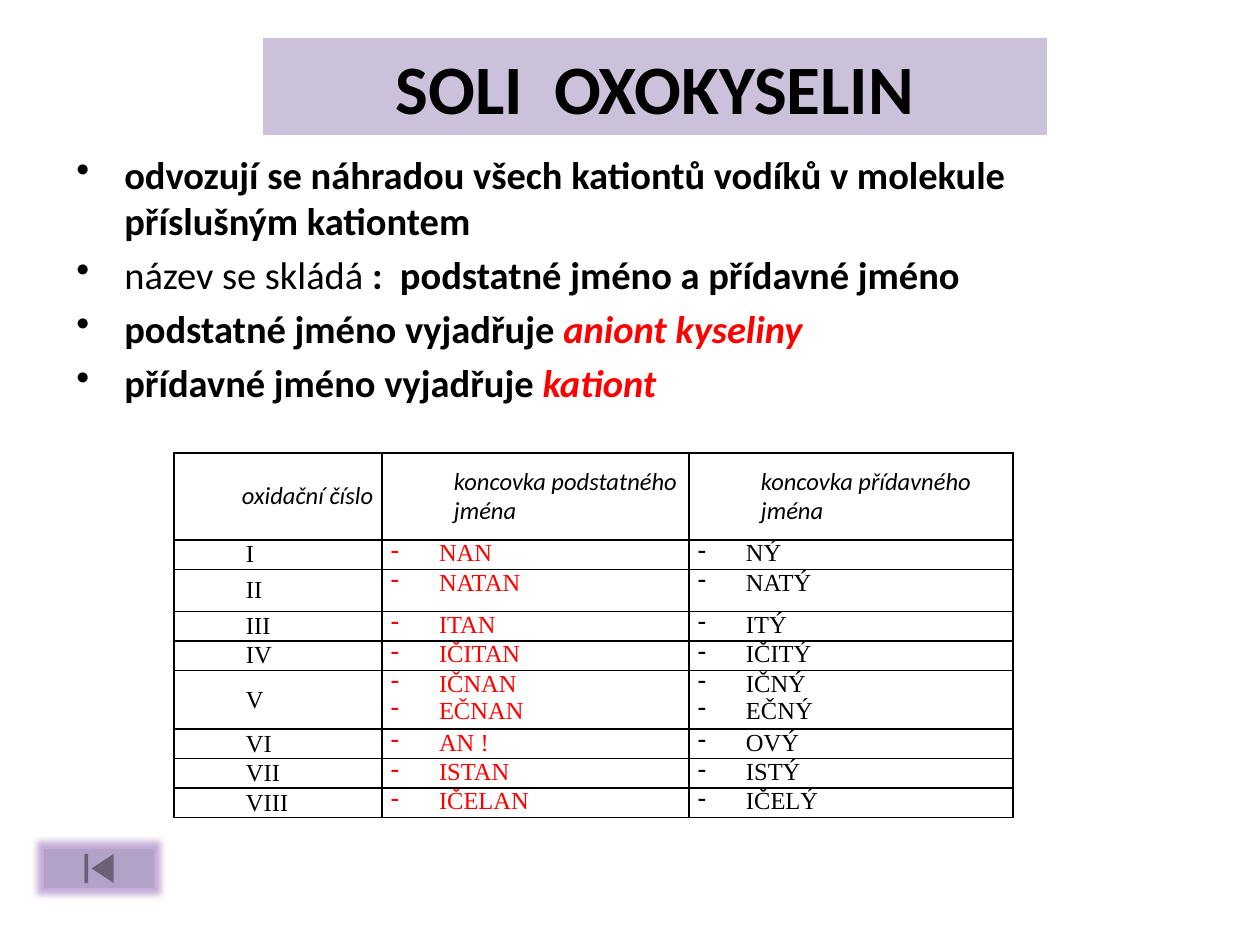
import pptx
import pptx.util
import pptx.dml.color
import pptx.enum.shapes
import pptx.enum.text
import pptx.oxml
import pptx.oxml.ns

PX = 914400 / 126
NS = pptx.oxml.ns.nsdecls("a")
MIDDLE = pptx.enum.text.MSO_ANCHOR.MIDDLE
BLACK, RED = "000000", "FF0000"


def px(n):
    return pptx.util.Emu(round(n * PX))


def style(p, size, color=BLACK, font="Calibri", bold=False, italic=False,
          margin=0, bullet=None):
    """Format every run of a paragraph, its left margin and its bullet."""
    for r in p.runs:
        r.font.size = pptx.util.Pt(size)
        r.font.name = font
        r.font.bold = bold
        r.font.italic = italic
        r.font.color.rgb = pptx.dml.color.RGBColor.from_string(color)
    pPr = p._p.get_or_add_pPr()
    pPr.set("marL", str(px(margin)))
    pPr.set("indent", str(-px(margin) if bullet else 0))
    if bullet:
        pPr.append(pptx.oxml.parse_xml(f'<a:buChar {NS} char="{bullet}"/>'))


prs = pptx.Presentation()
prs.slide_width, prs.slide_height = px(1260), px(945)
s = prs.slides.add_slide(prs.slide_layouts[5])

# Title
sp = s.shapes.title
sp.left, sp.top, sp.width, sp.height = px(263), px(38), px(784), px(97)
sp.fill.solid()
sp.fill.fore_color.rgb = pptx.dml.color.RGBColor.from_string("CCC1DA")
tf = sp.text_frame
tf.text = "SOLI  OXOKYSELIN"
tf.auto_size = pptx.enum.text.MSO_AUTO_SIZE.NONE
tf.vertical_anchor = MIDDLE
tf.paragraphs[0].alignment = pptx.enum.text.PP_ALIGN.CENTER
style(tf.paragraphs[0], 39.6, bold=True)

# Bullet list: runs of (text, colour, bold, italic)
points = [
    [("odvozují se náhradou všech kationtů vodíků v\u00a0molekule příslušným kationtem",
      BLACK, True, False)],
    [("název se skládá", BLACK, False, False),
     (" :  podstatné jméno a přídavné jméno", BLACK, True, False)],
    [("podstatné jméno vyjadřuje ", BLACK, True, False),
     ("aniont kyseliny", RED, True, True)],
    [("přídavné jméno vyjadřuje ", BLACK, True, False),
     ("kationt", RED, True, True)],
]
tf = s.shapes.add_textbox(px(64), px(145), px(1134), px(297)).text_frame
tf.word_wrap = True
for i, runs in enumerate(points):
    p = tf.paragraphs[0] if i == 0 else tf.add_paragraph()
    p.space_before = pptx.util.Pt(4.4)
    for text, *_ in runs:
        p.add_run().text = text
    style(p, 22, margin=48, bullet="•")
    for r, (_, color, bold, italic) in zip(p.runs, runs):
        r.font.bold, r.font.italic = bold, italic
        r.font.color.rgb = pptx.dml.color.RGBColor.from_string(color)

# Table of endings
rows = [
    ("oxidační číslo", "koncovka podstatného jména", "koncovka přídavného jména"),
    ("I", "NAN", "NÝ"),
    ("II", "NATAN", "NATÝ"),
    ("III", "ITAN", "ITÝ"),
    ("IV", "IČITAN", "IČITÝ"),
    ("V", "IČNAN\nEČNAN", "IČNÝ\nEČNÝ"),
    ("VI", "AN !", "OVÝ"),
    ("VII", "ISTAN", "ISTÝ"),
    ("VIII", "IČELAN", "IČELÝ"),
]
col_widths = [208, 307, 324]
row_heights = [87, 29, 42, 29, 29, 58, 29, 29, 29]
table = s.shapes.add_table(len(rows), 3, px(174), px(453), px(sum(col_widths)),
                           px(sum(row_heights))).table
table.first_row = table.horz_banding = False
for col, width in zip(table.columns, col_widths):
    col.width = px(width)
for row, height in zip(table.rows, row_heights):
    row.height = px(height)

for i, row in enumerate(rows):
    for j, text in enumerate(row):
        cell = table.cell(i, j)
        cell.text_frame.text = text
        cell.margin_left = cell.margin_right = px(5 if i == j == 0 else 9)
        cell.margin_top = cell.margin_bottom = 0
        ending = i > 0 and j > 0
        if not ending:
            cell.vertical_anchor = MIDDLE
        for p in cell.text_frame.paragraphs:
            style(p, 14, color=RED if ending and j == 1 else BLACK,
                  font="Times New Roman" if i else "Calibri", italic=i == 0,
                  margin=48 if ending else 63, bullet="-" if ending else None)
        tcPr = cell._tc.get_or_add_tcPr()
        for side in ("lnL", "lnR", "lnT", "lnB"):
            tcPr.append(pptx.oxml.parse_xml(
                f'<a:{side} {NS} w="12700"><a:solidFill><a:srgbClr val="{BLACK}"/>'
                f'</a:solidFill></a:{side}>'))
        cell.fill.background()

# Back-to-start button with a soft glow
sp = s.shapes.add_shape(pptx.enum.shapes.MSO_SHAPE.ACTION_BUTTON_BEGINNING,
                        px(44), px(849), px(110), px(39))
sp.shadow.inherit = False
sp.fill.solid()
sp.fill.fore_color.rgb = pptx.dml.color.RGBColor.from_string("B3A2C7")
sp.line.fill.background()
effects = sp._element.spPr.find(pptx.oxml.ns.qn("a:effectLst"))
effects.append(pptx.oxml.parse_xml(
    f'<a:glow {NS} rad="101600"><a:srgbClr val="7030A0"><a:alpha val="40000"/>'
    f'</a:srgbClr></a:glow>'))

prs.save("out.pptx")
